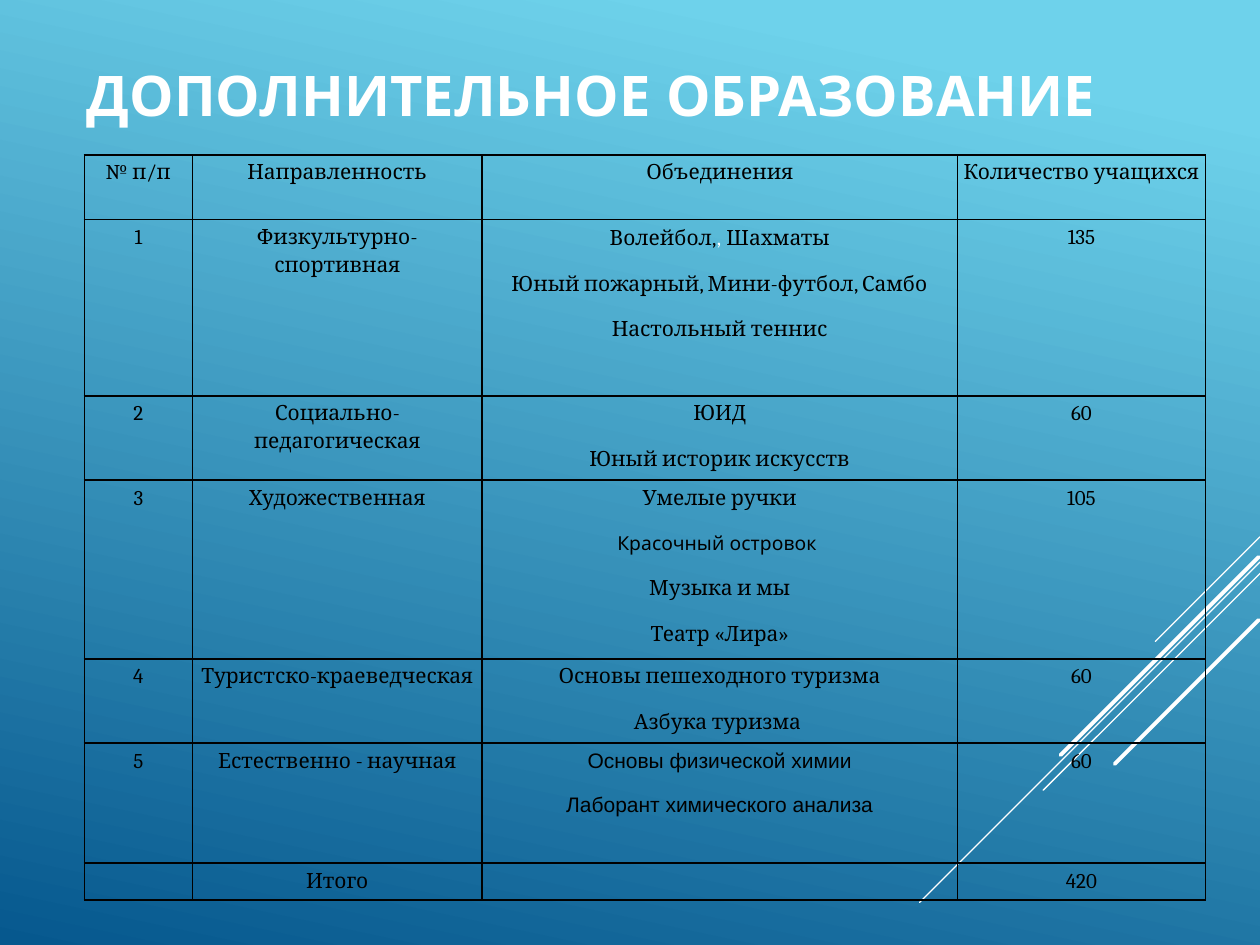
from lxml.etree import SubElement
from pptx import Presentation
from pptx.dml.color import RGBColor
from pptx.enum.shapes import MSO_CONNECTOR as Connector
from pptx.enum.text import MSO_ANCHOR as Anchor, PP_ALIGN as Align
from pptx.oxml.ns import qn
from pptx.util import Cm, Pt

WHITE, BLACK = "FFFFFF", "000000"
COLUMN_WIDTHS = [2.18, 5.84, 9.58, 5]
ROW_HEIGHTS = [1.3, 3.56, 1.7, 3.6, 1.7, 2.42, 0.74]
ARIAL = {"font": "Arial"}
ROWS = [
    ["№ п/п", "Направленность", "Объединения", "Количество учащихся"],
    ["1", "Физкультурно-спортивная",
     [[("Волейбол,", {}), (", ", {"font": "Calibri", "color": WHITE}), ("Шахматы", {})],
      "Юный пожарный, Мини-футбол, Самбо", "Настольный теннис"], "135"],
    ["2", "Социально-педагогическая", ["ЮИД", "Юный историк искусств"], "60"],
    ["3", "Художественная",
     ["Умелые ручки", [("Красочный островок ", {"font": "Quicksand", "size": 11})],
      "Музыка и мы", "Театр «Лира»"], "105"],
    ["4", "Туристско-краеведческая",
     ["Основы пешеходного туризма", "Азбука туризма "], "60"],
    ["5", "Естественно - научная",
     [[("Основы физической химии", ARIAL)],
      [("Лаборант химического анализа", ARIAL)]], "60"],
    ["", "Итого", "", "420"],
]


def rgb(value):
    return RGBColor.from_string(value)


def write(paragraph, text, font="Cambria", size=12, color=BLACK, bold=False):
    run = paragraph.add_run()
    run.text = text
    run.font.name = font
    run.font.size = Pt(size)
    run.font.bold = bold
    run.font.color.rgb = rgb(color)


def paint_background(slide):
    fill = slide.background.fill
    fill.gradient()
    fill.gradient_angle = 258
    for stop, (position, color) in zip(fill.gradient_stops, [(0.1, "6ED2EB"), (1, "06588E")]):
        stop.position = position
        stop.color.rgb = rgb(color)


def draw_diagonals(slide, right, top):
    for inset, drop, reach, weight in [
        (0, 0, 2.11, 0.75),
        (0, 0.51, 6.86, 0.75),
        (0, 0.74, 4.37, 0.75),
        (0.03, 0.41, 3.99, 2.25),
        (0.03, 1.68, 2.9, 2.25),
    ]:
        x, y = right - inset, top + drop
        diagonal = slide.shapes.add_connector(
            Connector.STRAIGHT, Cm(x), Cm(y), Cm(x - reach), Cm(y + reach))
        diagonal.line.color.rgb = rgb(WHITE)
        diagonal.line.width = Pt(weight)
        diagonal.line._get_or_add_ln().set("cap", "rnd")
        SubElement(diagonal._element.spPr, qn("a:effectLst"))


def add_heading(slide, left, top, width, height):
    heading = slide.shapes.add_textbox(Cm(left), Cm(top), Cm(width), Cm(height)).text_frame
    heading.word_wrap = True
    heading.vertical_anchor = Anchor.BOTTOM
    write(heading.paragraphs[0], "ДОПОЛНИТЕЛЬНОЕ ОБРАЗОВАНИЕ",
          font="Quicksand", size=32, color=WHITE, bold=True)


def outline(cell):
    properties = cell._tc.get_or_add_tcPr()
    for side in ("lnL", "lnR", "lnT", "lnB"):
        border = SubElement(properties, qn(f"a:{side}"), w=str(Pt(1)))
        SubElement(SubElement(border, qn("a:solidFill")), qn("a:srgbClr"), val=BLACK)


def fill_cell(cell, content):
    cell.margin_left = cell.margin_right = cell.margin_top = cell.margin_bottom = Cm(0.05)
    outline(cell)
    cell.fill.background()
    frame = cell.text_frame
    if not content:
        SubElement(frame.paragraphs[0]._p, qn("a:endParaRPr"), sz="1200")
        return
    entries = [content] if isinstance(content, str) else content
    for index, entry in enumerate(entries):
        paragraph = frame.add_paragraph() if index else frame.paragraphs[0]
        paragraph.alignment = Align.CENTER
        paragraph.line_spacing = 1.15
        paragraph.space_after = Pt(10)
        for text, style in [(entry, {})] if isinstance(entry, str) else entry:
            write(paragraph, text, **style)


def add_clubs(slide, left, top):
    clubs = slide.shapes.add_table(
        len(ROWS), len(COLUMN_WIDTHS), Cm(left), Cm(top),
        Cm(sum(COLUMN_WIDTHS)), Cm(sum(ROW_HEIGHTS))).table
    clubs.first_row = clubs.horz_banding = False
    for column, width in zip(clubs.columns, COLUMN_WIDTHS):
        column.width = Cm(width)
    for row, height, contents in zip(clubs.rows, ROW_HEIGHTS, ROWS):
        row.height = Cm(height)
        for cell, content in zip(row.cells, contents):
            fill_cell(cell, content)


def main():
    deck = Presentation()
    deck.slide_width, deck.slide_height = Cm(25.4), Cm(19.05)
    slide = deck.slides.add_slide(deck.slide_layouts[6])
    paint_background(slide)
    draw_diagonals(slide, right=25.4, top=10.82)
    add_heading(slide, left=1.5, top=0.91, width=22.81, height=1.8)
    add_clubs(slide, left=1.7, top=3.12)
    deck.save("out.pptx")


if __name__ == "__main__":
    main()
